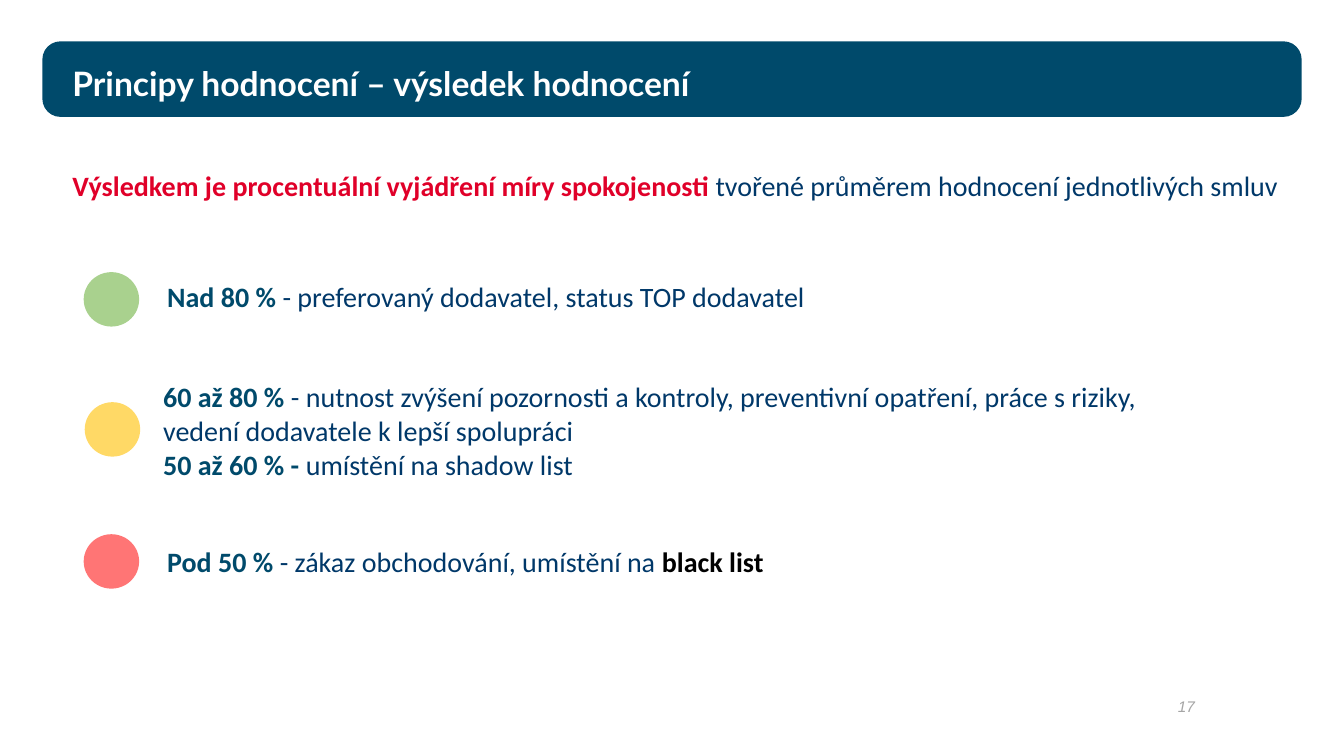
from dataclasses import dataclass

from pptx import Presentation
from pptx.dml.color import RGBColor
from pptx.enum.shapes import MSO_SHAPE
from pptx.enum.text import MSO_ANCHOR, PP_ALIGN
from pptx.util import Inches, Pt


@dataclass(frozen=True)
class Theme:
    petrol: str = "004A6B"
    navy: str = "003869"
    red: str = "E00029"
    black: str = "000000"
    white: str = "FFFFFF"
    gray: str = "A5A5A5"
    green_light: str = "A9D18E"
    amber_light: str = "FFD966"
    red_light: str = "FF7575"
    title_font: str = "Lato"
    body_font: str = "Calibri"
    number_font: str = "Arial"
    title_size: int = 24
    body_size: int = 20
    number_size: int = 11


theme = Theme()
presentation = Presentation()
presentation.slide_width = Inches(13.33)
presentation.slide_height = Inches(7.5)
slide = presentation.slides.add_slide(presentation.slide_layouts[6])


def add_filled_shape(kind, left, top, width, height, color):
    shape = slide.shapes.add_shape(
        kind, Inches(left), Inches(top), Inches(width), Inches(height))
    shape.shadow.inherit = False
    shape.fill.solid()
    shape.fill.fore_color.rgb = RGBColor.from_string(color)
    shape.line.fill.background()
    return shape


def add_text(left, top, width, height, paragraphs,
             font=theme.body_font, size=theme.body_size):
    """Add a text box; each paragraph is a list of (text, color, bold) runs."""
    box = slide.shapes.add_textbox(
        Inches(left), Inches(top), Inches(width), Inches(height))
    text_frame = box.text_frame
    text_frame.word_wrap = True
    for index, runs in enumerate(paragraphs):
        paragraph = text_frame.add_paragraph() if index else text_frame.paragraphs[0]
        for text, color, bold in runs:
            run = paragraph.add_run()
            run.text = text
            run.font.name = font
            run.font.size = Pt(size)
            run.font.bold = bold
            run.font.color.rgb = RGBColor.from_string(color)
    return text_frame


# Title bar
title_bar = add_filled_shape(
    MSO_SHAPE.ROUNDED_RECTANGLE, 0.42, 0.41, 12.49, 0.75, theme.petrol)
title_bar.adjustments[0] = 0.24
add_text(0.62, 0.58, 6.73, 0.57,
         [[("Principy hodnocení – výsledek hodnocení", theme.white, True)]],
         theme.title_font, theme.title_size)

# Introductory sentence
add_text(0.62, 1.62, 12.36, 0.74, [[
    ("Výsledkem je procentuální vyjádření míry spokojenosti ", theme.red, True),
    ("tvořené průměrem hodnocení jednotlivých smluv", theme.navy, False),
]])

# Traffic lights
lights = [
    (0.83, 2.7, theme.green_light),
    (0.84, 3.99, theme.amber_light),
    (0.83, 5.3, theme.red_light),
]
for left, top, color in lights:
    add_filled_shape(MSO_SHAPE.OVAL, left, top, 0.55, 0.54, color)

# Rating bands
bands = [
    (1.56, 2.72, 7.35, 0.44, [[
        ("Nad 80 % ", theme.petrol, True),
        ("- preferovaný dodavatel, status TOP dodavatel", theme.navy, False),
    ]]),
    (1.52, 3.72, 10.43, 1.11, [[
        ("60 až 80 % ", theme.petrol, True),
        ("- nutnost zvýšení pozornosti a kontroly, preventivní opatření, "
         "práce s riziky, vedení dodavatele k lepší spolupráci", theme.navy, False),
    ], [
        ("50 až 60 % -", theme.petrol, True),
        (" umístění na shadow list", theme.navy, False),
    ]]),
    (1.56, 5.35, 6.42, 0.44, [[
        ("Pod 50 % ", theme.petrol, True),
        ("- zákaz obchodování, umístění na ", theme.navy, False),
        ("black list", theme.black, True),
    ]]),
]
for left, top, width, height, paragraphs in bands:
    add_text(left, top, width, height, paragraphs)

# Page number
page_number = add_text(10.12, 6.81, 1.83, 0.4, [[("17", theme.gray, False)]],
                       theme.number_font, theme.number_size)
page_number.vertical_anchor = MSO_ANCHOR.MIDDLE
page_number.paragraphs[0].alignment = PP_ALIGN.RIGHT
page_number.paragraphs[0].runs[0].font.italic = True

presentation.save("out.pptx")
